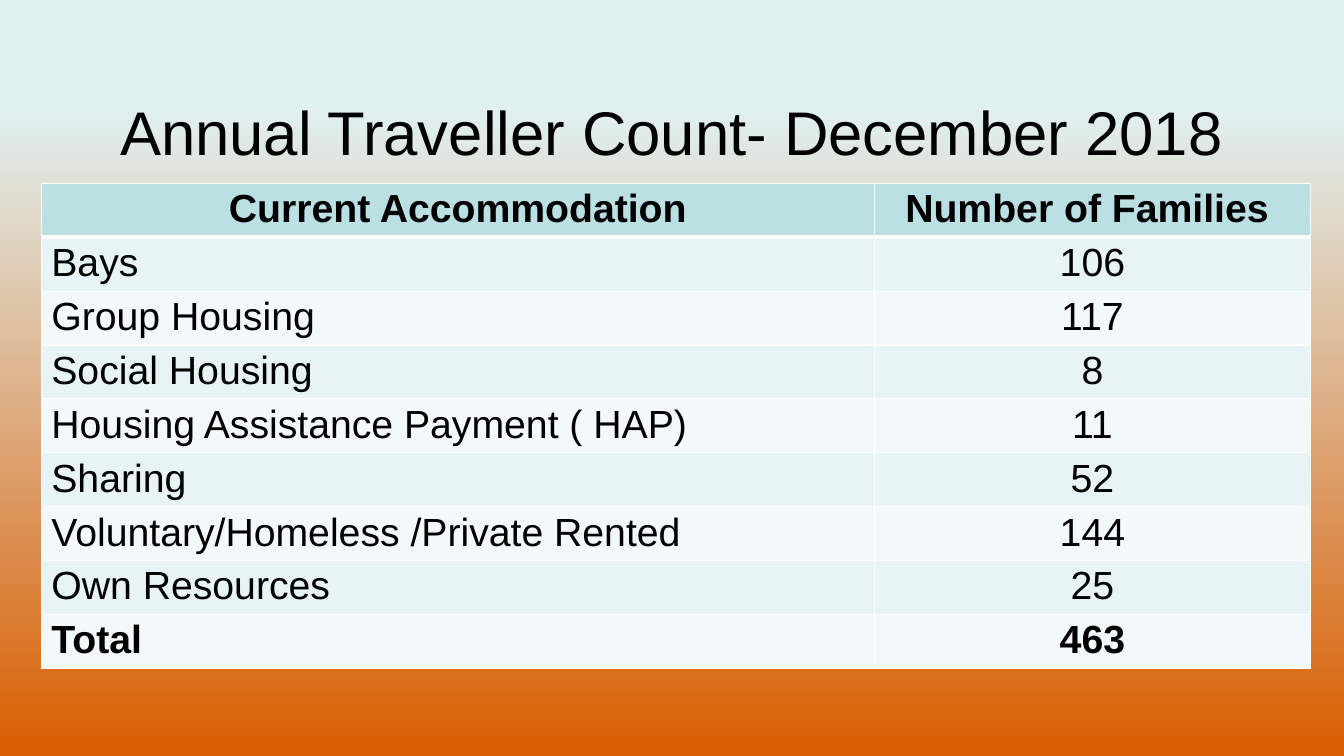
from copy import deepcopy
from typing import NamedTuple

from lxml import etree
from pptx import Presentation
from pptx.dml.color import RGBColor
from pptx.enum.text import MSO_ANCHOR, PP_ALIGN
from pptx.oxml.ns import qn
from pptx.util import Inches, Pt

LEFT, CENTER = PP_ALIGN.LEFT, PP_ALIGN.CENTER
MIDDLE = MSO_ANCHOR.MIDDLE
TITLE_ONLY = 5
FONT = "Arial"
BLACK, WHITE = "000000", "FFFFFF"
HEADER_FILL = "BBE0E3"
BAND_FILLS = ("E7F3F4", "F3F9FA")
BACKGROUND_STOPS = ((0, "E0F1F2"), (0.14, "E0F1F2"), (1, "D95E00"))
COLUMN_WIDTHS = (8.26, 4.33)


class CountRow(NamedTuple):
    """One line of the accommodation table."""

    accommodation: str
    families: str
    bold: bool = False


COUNT_ROWS = (
    CountRow("Current Accommodation", "Number of Families ", True),
    CountRow("Bays", "106"),
    CountRow("Group Housing", "117"),
    CountRow("Social Housing", "8"),
    CountRow("Housing Assistance Payment ( HAP)", "11"),
    CountRow("Sharing", "52"),
    CountRow("Voluntary/Homeless /Private Rented", "144"),
    CountRow("Own Resources", "25"),
    CountRow("Total", "463", True),
)


def rgb(value: str) -> RGBColor:
    """Turn a hex string into a colour."""
    return RGBColor.from_string(value)


def write_text(text_frame, text: str, *, size: float, bold: bool = False,
               align=LEFT, color: str = BLACK) -> None:
    """Write one formatted paragraph into a text frame."""
    paragraph = text_frame.paragraphs[0]
    paragraph.alignment = align
    run = paragraph.add_run()
    run.text = text
    run.font.name = FONT
    run.font.size = Pt(size)
    run.font.bold = bold
    run.font.color.rgb = rgb(color)


def paint_background(slide) -> None:
    """Fill the slide with the vertical gradient."""
    fill = slide.background.fill
    fill.gradient()
    fill.gradient_angle = 270
    first_stop = slide.element.find(f".//{qn('a:gs')}")
    first_stop.addnext(deepcopy(first_stop))
    for stop, (position, color) in zip(fill.gradient_stops, BACKGROUND_STOPS):
        stop.position = position
        stop.color.rgb = rgb(color)


def draw_borders(cell, top: float, bottom: float) -> None:
    """Give a cell white borders with the given top and bottom widths."""
    properties = cell._tc.get_or_add_tcPr()
    widths = {"a:lnL": 1, "a:lnR": 1, "a:lnT": top, "a:lnB": bottom}
    for tag, width in widths.items():
        line = etree.SubElement(properties, qn(tag), w=str(Pt(width)))
        solid = etree.SubElement(line, qn("a:solidFill"))
        etree.SubElement(solid, qn("a:srgbClr"), val=WHITE)


def add_title(slide, text: str) -> None:
    """Place and format the title placeholder."""
    title = slide.shapes.title
    title.left, title.top = Inches(1), Inches(0.67)
    title.width, title.height = Inches(11.33), Inches(1.25)
    title.text_frame.vertical_anchor = MIDDLE
    write_text(title.text_frame, text, size=44, align=CENTER)


def add_count_table(slide) -> None:
    """Add the table of families by accommodation."""
    frame = slide.shapes.add_table(
        len(COUNT_ROWS), len(COLUMN_WIDTHS), Inches(0.41), Inches(1.82),
        Inches(sum(COLUMN_WIDTHS)), Inches(4.81))
    table = frame.table
    for column, width in zip(table.columns, COLUMN_WIDTHS):
        column.width = Inches(width)
    for row_index, row in enumerate(COUNT_ROWS):
        is_header = row_index == 0
        fill = HEADER_FILL if is_header else BAND_FILLS[(row_index - 1) % 2]
        label_align = CENTER if is_header else LEFT
        contents = ((row.accommodation, label_align), (row.families, CENTER))
        for column_index, (text, align) in enumerate(contents):
            cell = table.cell(row_index, column_index)
            cell.margin_top = cell.margin_bottom = Inches(0.04)
            draw_borders(cell, top=3 if row_index == 1 else 1,
                         bottom=3 if is_header else 1)
            cell.fill.solid()
            cell.fill.fore_color.rgb = rgb(fill)
            write_text(cell.text_frame, text, size=28, bold=row.bold, align=align)


def main() -> None:
    """Build and save the slide."""
    presentation = Presentation()
    presentation.slide_width = Inches(13.33)
    presentation.slide_height = Inches(7.5)
    slide = presentation.slides.add_slide(presentation.slide_layouts[TITLE_ONLY])
    paint_background(slide)
    add_title(slide, "Annual Traveller Count- December 2018")
    add_count_table(slide)
    presentation.save("out.pptx")


if __name__ == "__main__":
    main()
